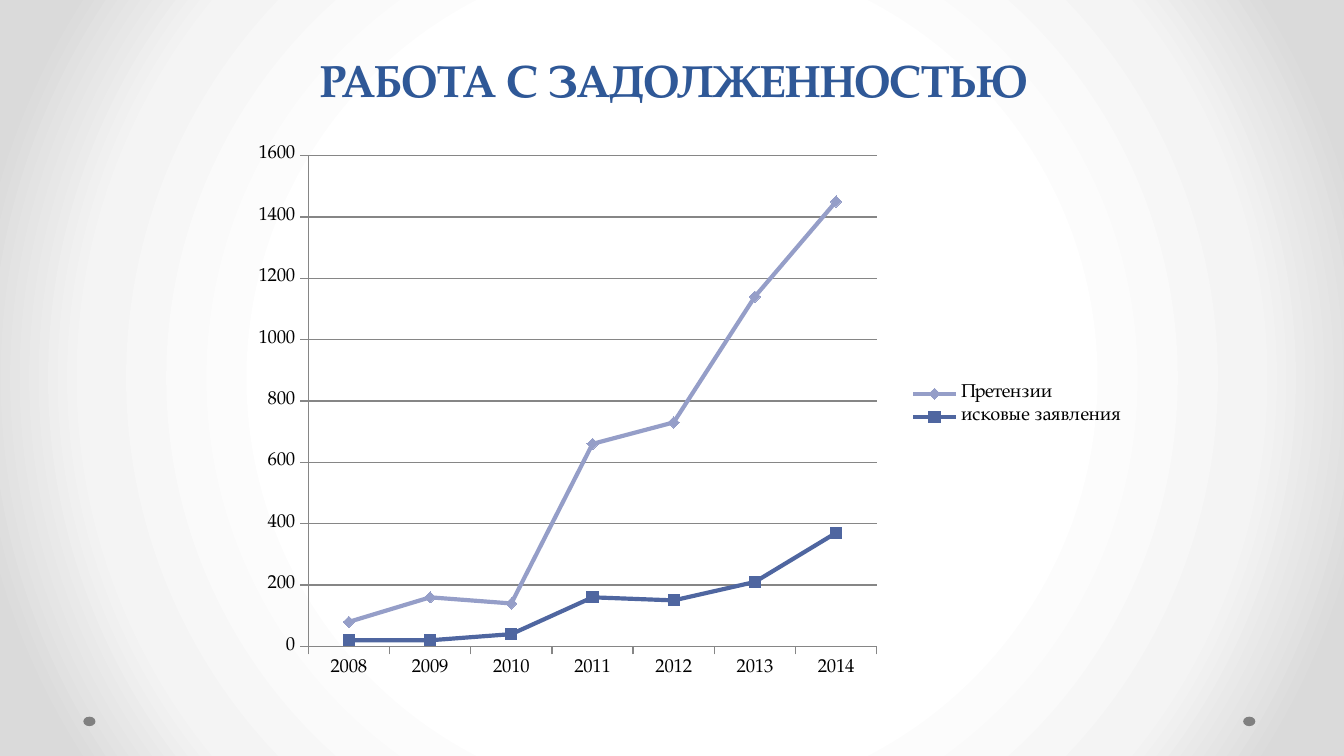
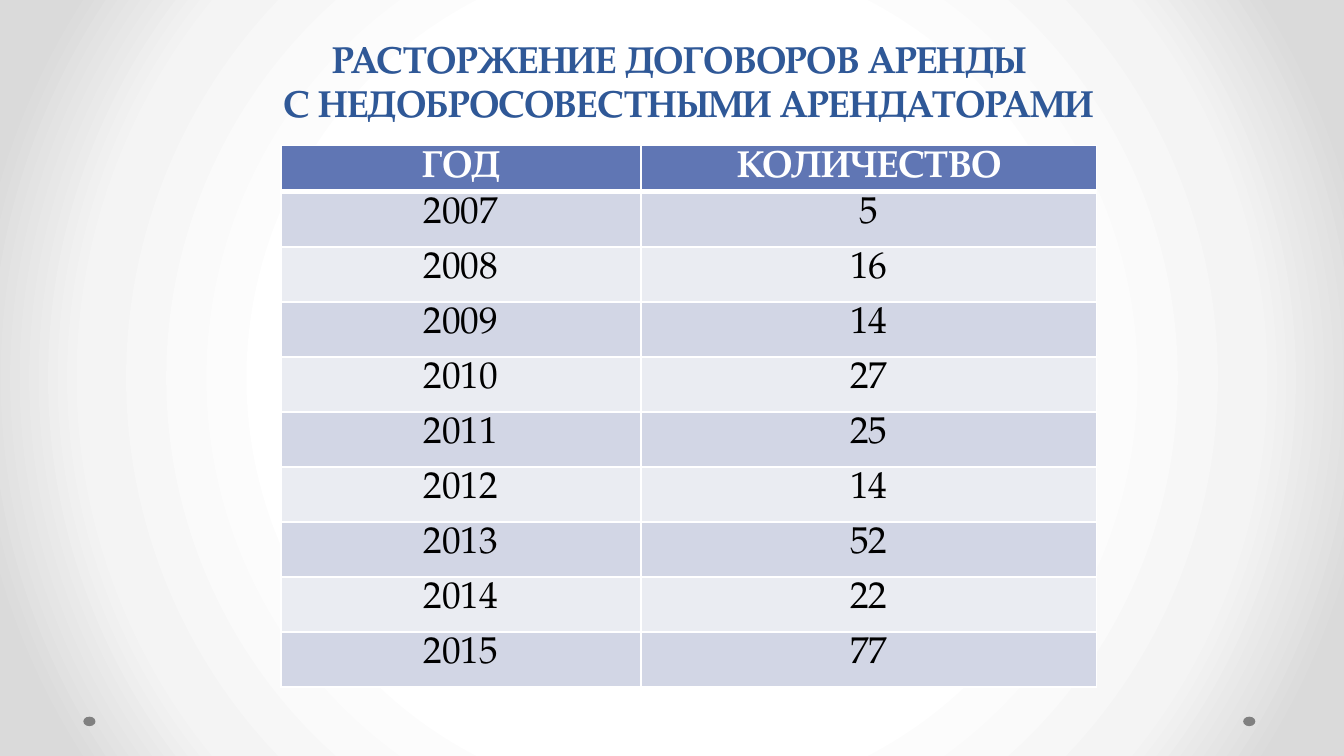
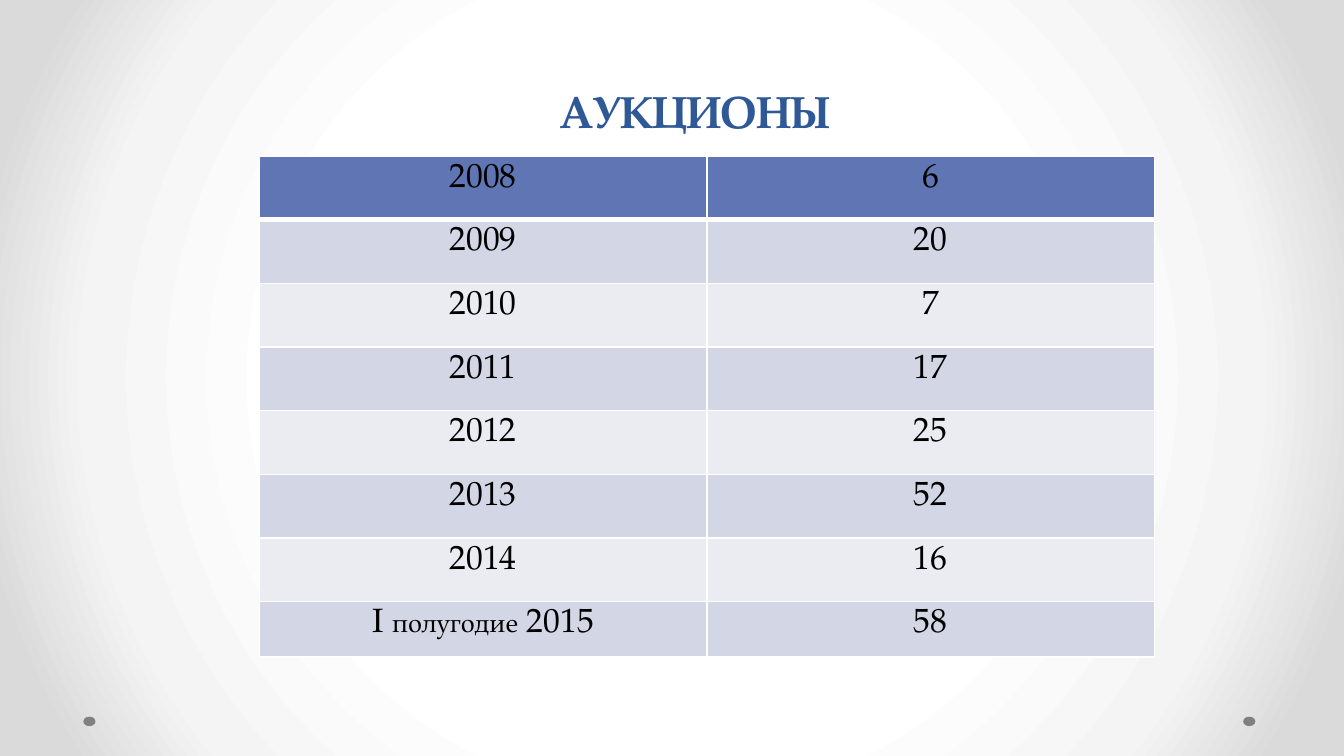
import dataclasses

import pptx
import pptx.chart.data
import pptx.dml.color
import pptx.enum.chart
import pptx.enum.shapes
import pptx.enum.text
import pptx.oxml
import pptx.oxml.ns
import pptx.util

Pt = pptx.util.Pt
WIDE, HIGH = Pt(720), Pt(405)
ALIGN = pptx.enum.text.PP_ALIGN
ANCHOR = pptx.enum.text.MSO_ANCHOR


@dataclasses.dataclass(frozen=True)
class Theme:
    font: str = "TeX Gyre Pagella"
    title: str = "2F5897"
    ink: str = "000000"
    white: str = "FFFFFF"
    head: str = "6076B4"
    bands: tuple = ("D2D6E5", "EAECF2")
    dot: str = "808080"
    grid: str = "868686"
    lines: tuple = ("4F66A0", "959EC8")
    glow: tuple = ((0, "FFFFFF"), (50, "FFFFFF"), (76, "F4F4F4"),
                   (92, "DADADA"), (100, "DADADA"))
    big: int = 24
    mid: int = 20
    cell: int = 18
    small: int = 14
    tiny: int = 10


LOOK = Theme()


def paint(code):
    return pptx.dml.color.RGBColor.from_string(code)


def across(share):
    return round(WIDE * share / 100)


def down(share):
    return round(HIGH * share / 100)


def area(left, top, width, height):
    return across(left), down(top), across(width), down(height)


def style(font, size, color, bold=False):
    font.name, font.size, font.bold = LOOK.font, Pt(size), bold
    font.color.rgb = paint(color)


def write(frame, text, size=LOOK.cell, color=LOOK.ink, bold=False, lead=None):
    para = frame.paragraphs[0]
    para.alignment = ALIGN.CENTER
    if lead:
        para.line_spacing = Pt(lead)
    parts = [(text, size)] if isinstance(text, str) else text
    for words, points in parts:
        for row, line in enumerate(words.split("\n")):
            if row:
                para.add_line_break()
            run = para.add_run()
            run.text = line
            style(run.font, points, color, bold)


def add_page(deck, text, box, size=LOOK.big, lead=58):
    page = deck.slides.add_slide(deck.slide_layouts[5])
    title = page.shapes.title
    title.left, title.top, title.width, title.height = area(*box)
    frame = title.text_frame
    frame.auto_size = pptx.enum.text.MSO_AUTO_SIZE.NONE
    frame.vertical_anchor = ANCHOR.BOTTOM
    frame.margin_bottom = Pt(2)
    write(frame, text, size=size, color=LOOK.title, bold=True, lead=lead)
    return page


def set_glow(master):
    master.background.fill.solid()
    stops = "".join(
        f'<a:gs pos="{pos * 1000}"><a:srgbClr val="{code}"/></a:gs>'
        for pos, code in LOOK.glow)
    fill = pptx.oxml.parse_xml(
        f'<a:gradFill {pptx.oxml.ns.nsdecls("a")} rotWithShape="1">'
        f'<a:gsLst>{stops}</a:gsLst><a:path path="circle">'
        '<a:fillToRect l="50000" t="50000" r="50000" b="50000"/>'
        '</a:path></a:gradFill>')
    holder = master.element.xpath(".//p:bgPr")[0]
    holder.replace(holder[0], fill)


def add_dots(page, master):
    for left in (92.5, 6.2):
        dot = page.shapes.add_shape(
            pptx.enum.shapes.MSO_SHAPE.OVAL, *area(left, 94.8, 0.9, 1.25))
        dot.shadow.inherit = False
        dot.fill.solid()
        dot.fill.fore_color.rgb = paint(LOOK.dot)
        dot.line.fill.background()
        master.shapes.element.append(dot.element)


def edge(cell, top, base):
    sides = (("L", 1), ("R", 1), ("T", top), ("B", base))
    for spot, (side, width) in enumerate(sides):
        line = pptx.oxml.parse_xml(
            f'<a:ln{side} {pptx.oxml.ns.nsdecls("a")} w="{Pt(width)}">'
            f'<a:solidFill><a:srgbClr val="{LOOK.white}"/></a:solidFill>'
            f'</a:ln{side}>')
        cell._tc.get_or_add_tcPr().insert(spot, line)


def add_grid(page, left, top, cols, rows, data, size, inset, head):
    grid = page.shapes.add_table(
        len(rows), len(cols), *area(left, top, sum(cols), sum(rows))).table
    for col, width in zip(grid.columns, cols):
        col.width = across(width)
    for num, (height, record) in enumerate(zip(rows, data)):
        grid.rows[num].height = down(height)
        for col, text in enumerate(record):
            cell = grid.cell(num, col)
            cell.margin_top = cell.margin_bottom = Pt(inset)
            cell.fill.solid()
            cell.fill.fore_color.rgb = paint(
                LOOK.bands[(num - 1) % 2] if num else LOOK.head)
            edge(cell, 3 if num == 1 else 1, 1 if num else 3)
            form = {} if num else head
            write(cell.text_frame, text, size=size, **form)


def set_plot(chart, left, top, width, height):
    spots = zip("xywh", (left, top, width, height))
    modes = '<c:xMode val="edge"/><c:yMode val="edge"/>'
    sizes = "".join(f'<c:{key} val="{val}"/>' for key, val in spots)
    layout = pptx.oxml.parse_xml(
        f'<c:layout {pptx.oxml.ns.nsdecls("c")}><c:manualLayout>'
        f'<c:layoutTarget val="inner"/>{modes}{sizes}'
        '</c:manualLayout></c:layout>')
    plot = chart.element.xpath(".//c:plotArea")[0]
    for old in plot.xpath("./c:layout"):
        plot.remove(old)
    plot.insert(0, layout)


def trace(line, color, width):
    line.color.rgb = paint(color)
    line.width = Pt(width)


def add_lines(page, box, cats, sets):
    kinds = pptx.enum.chart
    data = pptx.chart.data.CategoryChartData()
    data.categories = cats
    for name, vals in sets:
        data.add_series(name, vals)
    chart = page.shapes.add_chart(
        kinds.XL_CHART_TYPE.LINE_MARKERS_STACKED, *area(*box), data).chart
    style(chart.font, LOOK.tiny, LOOK.ink)
    chart.has_title = False
    chart.has_legend = True
    chart.legend.position = kinds.XL_LEGEND_POSITION.RIGHT
    chart.legend.include_in_layout = False
    chart.plots[0].vary_by_categories = False
    for axis in (chart.category_axis, chart.value_axis):
        axis.major_tick_mark = kinds.XL_TICK_MARK.OUTSIDE
        axis.minor_tick_mark = kinds.XL_TICK_MARK.NONE
        trace(axis.format.line, LOOK.grid, 0.75)
    scale = chart.value_axis
    scale.minimum_scale, scale.maximum_scale, scale.major_unit = 0, 1600, 200
    scale.has_major_gridlines = True
    trace(scale.major_gridlines.format.line, LOOK.grid, 0.75)
    marks = (kinds.XL_MARKER_STYLE.SQUARE, kinds.XL_MARKER_STYLE.DIAMOND)
    for item, color, mark in zip(chart.plots[0].series, LOOK.lines, marks):
        item.smooth = False
        trace(item.format.line, color, 2.25)
        item.marker.style, item.marker.size = mark, 6
        item.marker.format.fill.solid()
        item.marker.format.fill.fore_color.rgb = paint(color)
        trace(item.marker.format.line, color, 0.75)
    set_plot(chart, 0.067, 0.056, 0.639, 0.872)


def main():
    deck = pptx.Presentation()
    deck.slide_width, deck.slide_height = WIDE, HIGH
    set_glow(deck.slide_master)

    debts = add_page(deck, "РАБОТА С ЗАДОЛЖЕННОСТЬЮ", (5.1, -8.7, 90, 23.3))
    add_dots(debts, deck.slide_master)
    add_lines(debts, (18.5, 16.4, 66.2, 74.5),
              [str(year) for year in range(2008, 2015)],
              [("исковые заявления", (20, 20, 40, 160, 150, 210, 370)),
               ("Претензии", (60, 140, 100, 500, 580, 930, 1080))])

    ended = add_page(
        deck,
        "РАСТОРЖЕНИЕ ДОГОВОРОВ АРЕНДЫ \n С НЕДОБРОСОВЕСТНЫМИ АРЕНДАТОРАМИ",
        (5.9, 8, 90, 9.1), size=LOOK.mid, lead=24)
    counts = (5, 16, 14, 27, 25, 14, 52, 22, 77)
    add_grid(ended, 20.9, 19.25, (26.8, 33.9), [6.1] + [7.28] * 9,
             [("ГОД", "КОЛИЧЕСТВО")]
             + [(str(2007 + num), str(val)) for num, val in enumerate(counts)],
             LOOK.mid, 2.6, {"color": LOOK.white, "bold": True})

    sales = add_page(deck, "АУКЦИОНЫ", (6.7, -4.6, 90, 23.3))
    counts = (6, 20, 7, 17, 25, 52, 16)
    half = [("I ", LOOK.cell), ("полугодие", LOOK.small), (" 2015", LOOK.cell)]
    add_grid(sales, 19.3, 20.65, (33.3, 33.3), [8.42] * 7 + [7.3],
             [(str(2008 + num), str(val)) for num, val in enumerate(counts)]
             + [(half, "58")],
             LOOK.cell, 3.6, {})

    deck.save("out.pptx")


if __name__ == "__main__":
    main()
